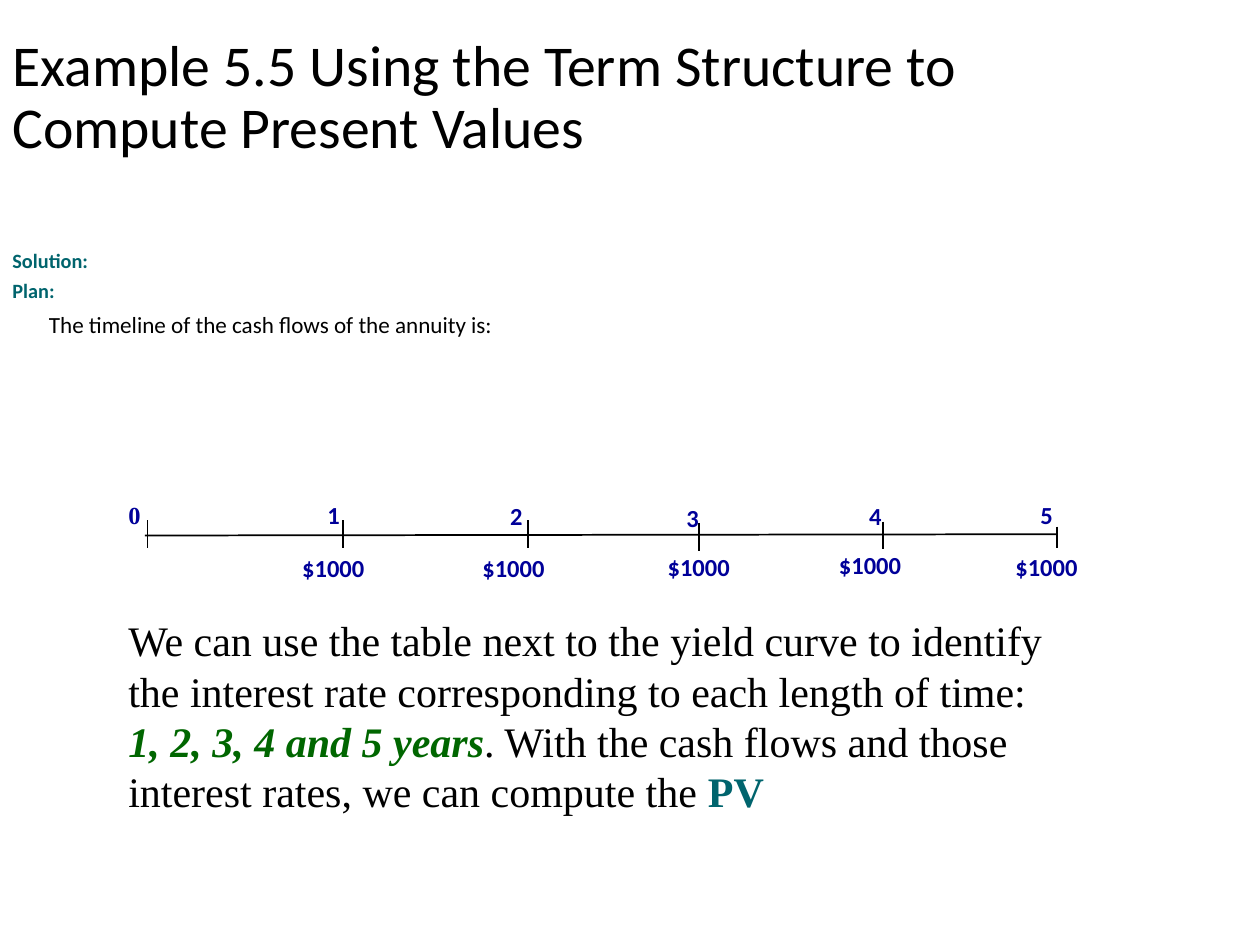
from pptx import Presentation
from pptx.dml.color import RGBColor
from pptx.enum.shapes import MSO_CONNECTOR as Connector, MSO_SHAPE as Shape
from pptx.enum.text import MSO_ANCHOR as Anchor, PP_ALIGN as Align
from pptx.oxml.ns import qn
from pptx.util import Inches, Pt
from lxml.etree import SubElement

BLACK, WHITE, NAVY, TEAL, GREEN = "000000", "FFFFFF", "000099", "00646D", "006600"
SERIF = "Times New Roman"
YEARS = [
    # year, label left, label top, tick x, tick top, amount left, amount top
    ("0", 0.92, 3.92, 1.17, 4.13, None, None),
    ("1", 2.50, 3.92, 2.72, 4.13, 2.30, 4.34),
    ("2", 3.95, 3.93, 4.19, 4.13, 3.73, 4.34),
    ("3", 5.35, 3.94, 5.55, 4.15, 5.20, 4.33),
    ("4", 6.80, 3.93, 7.01, 4.14, 6.56, 4.32),
    ("5", 8.16, 3.92, 8.39, 4.13, 7.96, 4.33),
]


def color(value):
    """Turn a hex string into a colour."""
    return RGBColor.from_string(value)


def write(para, text, size=14, font="Calibri", fill=BLACK, bold=False, italic=False):
    """Add a formatted span of text to a paragraph."""
    span = para.add_run()
    span.text = text
    span.font.size = Pt(size)
    span.font.name = font
    span.font.bold = bold
    span.font.italic = italic
    span.font.color.rgb = color(fill)


def add_box(page, left, top, width, height, anchor=Anchor.TOP):
    """Add a wrapping text box and return its text frame."""
    box = page.shapes.add_textbox(*map(Inches, (left, top, width, height)))
    frame = box.text_frame
    frame.word_wrap = True
    frame.vertical_anchor = anchor
    return frame


def add_label(page, text, left, top, width, height, font="Calibri"):
    """Add a white rectangle with a bold navy label."""
    box = page.shapes.add_shape(Shape.RECTANGLE, *map(Inches, (left, top, width, height)))
    box.shadow.inherit = False
    box.fill.solid()
    box.fill.fore_color.rgb = color(WHITE)
    box.line.fill.background()
    box.text_frame.vertical_anchor = Anchor.TOP
    para = box.text_frame.paragraphs[0]
    para.alignment = Align.LEFT
    para.space_after = Pt(10)
    write(para, text, font=font, fill=NAVY, bold=True)


def add_line(page, *ends):
    """Add a thin black line between two points."""
    line = page.shapes.add_connector(Connector.STRAIGHT, *map(Inches, ends))
    line.line.color.rgb = color(BLACK)
    line.line.width = Pt(1)
    SubElement(line._element.spPr, qn("a:effectLst"))


def add_title(page):
    """Add the slide title."""
    para = add_box(page, 0, 0.16, 8.08, 1.25, Anchor.MIDDLE).paragraphs[0]
    para.line_spacing = 0.9
    write(para, "Example 5.5 Using the Term Structure to Compute Present Values", size=33)


def add_plan(page):
    """Add the solution headings and the indented sentence."""
    frame = add_box(page, 0, 1.97, 9.3, 1.28)
    lines = [
        ("Solution:", 11.6, TEAL, True, 0, 7.5),
        ("Plan:", 11.6, TEAL, True, 0, 7.5),
        ("The timeline of the cash flows of the annuity is:", 13.2, BLACK, False, 0.29, 9.4),
    ]
    for index, (text, size, fill, bold, margin, before) in enumerate(lines):
        para = frame.add_paragraph() if index else frame.paragraphs[0]
        para.line_spacing = 0.7
        para.space_before = Pt(before)
        para._p.get_or_add_pPr().set("marL", str(Inches(margin)))
        write(para, text, size=size, fill=fill, bold=bold)


def add_timeline(page):
    """Add the axis with its ticks, years and payments."""
    for year, left, top, tick, tick_top, amount_left, amount_top in YEARS:
        if amount_left is not None:
            add_label(page, "$1000", amount_left, amount_top, 0.88, 0.24)
        add_label(page, year, left, top, 0.43, 0.25, SERIF if year == "0" else "Calibri")
    add_line(page, 1.15, 4.25, 8.39, 4.24)
    for year, left, top, tick, tick_top, *amount in YEARS:
        start = 4.18 if year == "5" else tick_top
        add_line(page, tick, start, tick, tick_top + 0.22)


def add_conclusion(page):
    """Add the closing paragraph with its highlighted words."""
    para = add_box(page, 0.92, 4.83, 7.92, 1.7).paragraphs[0]
    style = {"size": 24, "font": SERIF}
    write(para, "We can use the table next to the yield curve to identify "
                "the interest rate corresponding to each length of time:", **style)
    para.add_line_break()
    write(para, "1, 2, 3, 4 and 5 years", fill=GREEN, bold=True, italic=True, **style)
    write(para, ". With the cash flows and those interest rates, we can compute the ", **style)
    write(para, "PV", fill=TEAL, bold=True, **style)


def main():
    """Build and save the slide."""
    deck = Presentation()
    deck.slide_width, deck.slide_height = Inches(10), Inches(7.5)
    page = deck.slides.add_slide(deck.slide_layouts[6])
    add_title(page)
    add_plan(page)
    add_timeline(page)
    add_conclusion(page)
    deck.save("out.pptx")


if __name__ == "__main__":
    main()
